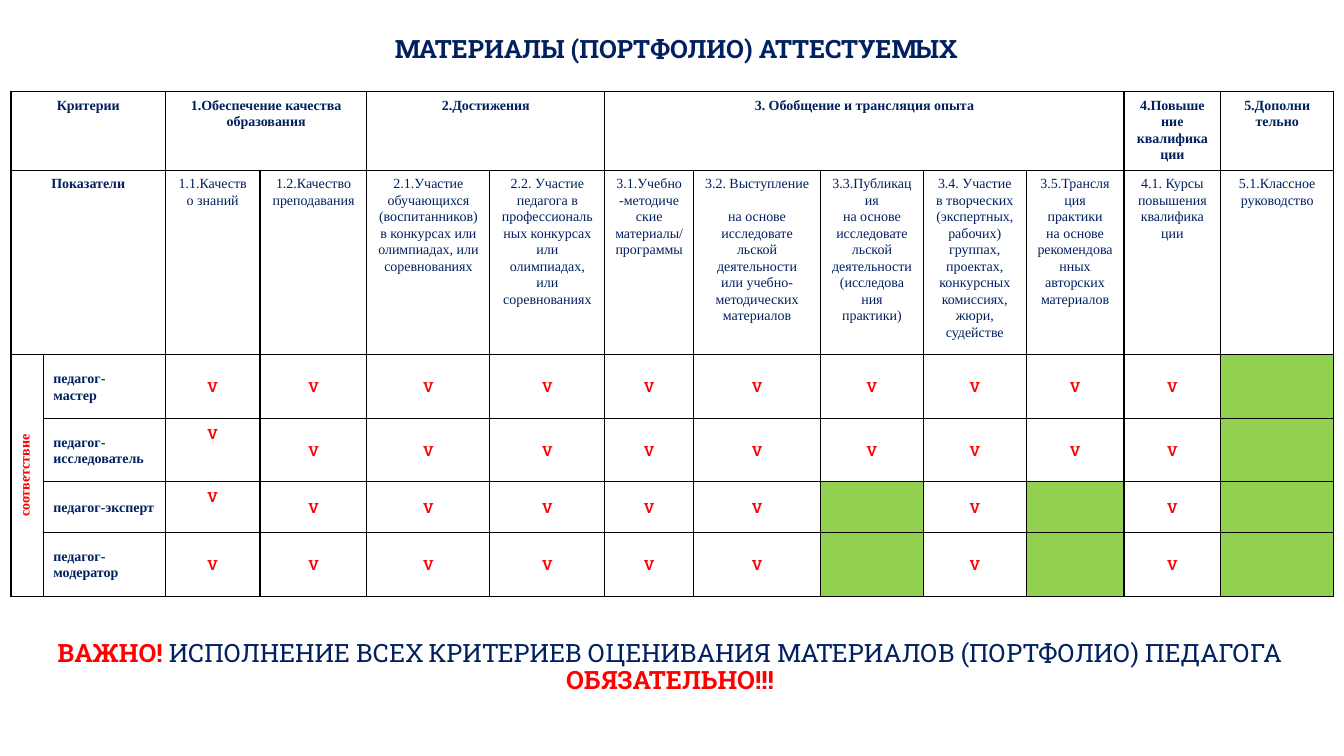
from dataclasses import dataclass

from lxml.etree import SubElement
from pptx import Presentation
from pptx.dml.color import RGBColor
from pptx.enum.text import MSO_ANCHOR, PP_ALIGN
from pptx.oxml.ns import qn
from pptx.util import Inches, Pt


@dataclass(frozen=True)
class Theme:
    """Colours, fonts and type sizes of the slide."""
    navy: RGBColor = RGBColor.from_string("002060")
    red: RGBColor = RGBColor.from_string("FF0000")
    green: RGBColor = RGBColor.from_string("92D050")
    white: RGBColor = RGBColor.from_string("FFFFFF")
    border: str = "000000"
    display: str = "Roboto Slab"
    body: str = "Times New Roman"
    heading_size: Pt = Pt(18)
    cell_size: Pt = Pt(10)
    border_width: Pt = Pt(1)


@dataclass(frozen=True)
class Box:
    """Rectangle counted in grid steps."""
    left: int
    top: int
    width: int
    height: int

    def place(self):
        """Return the rectangle as slide lengths."""
        return [steps * GRID for steps in (self.left, self.top, self.width, self.height)]


THEME = Theme()
GRID = Inches(0.01)
SLIDE_COLUMNS, SLIDE_ROWS = 1333, 750
COLUMN_STEPS = [32, 121, 94, 106, 122, 114, 88, 126, 102, 102, 97, 96, 112]
ROW_STEPS = [78, 183, 63, 63, 50, 64]
LABEL_COLUMNS = 2

CRITERIA = [
    ("Критерии", 2),
    ("1.Обеспечение качества образования", 2),
    ("2.Достижения", 2),
    ("3. Обобщение и трансляция опыта", 5),
    ("4.Повыше\nние квалификации", 1),
    ("5.Дополни\nтельно", 1),
]
INDICATORS = [
    "1.1.Качество знаний",
    "1.2.Качество преподавания",
    "2.1.Участие обучающихся (воспитанников)\nв конкурсах или олимпиадах, или соревнованиях",
    "2.2. Участие педагога в профессиональ\nных конкурсах или олимпиадах, или соревнованиях",
    "3.1.Учебно-методиче\nские материалы/ программы",
    "3.2. Выступление\nна основе исследовате\nльской деятельности\nили учебно-\nметодических материалов",
    "3.3.Публикация\nна основе исследовате\nльской деятельности (исследова\nния практики)",
    "3.4. Участие\nв творческих (экспертных, рабочих) группах, проектах, "
    "конкурсных комиссиях, жюри,\nсудействе",
    "3.5.Трансля\nция практики\nна основе рекомендованных авторских материалов",
    "4.1. Курсы повышения квалифика\nции",
    "5.1.Классное руководство",
]
SPACED_INDICATOR = INDICATORS.index(next(t for t in INDICATORS if t.startswith("3.2.")))
LEVELS = [
    ("педагог-\nмастер", "VVVVVVVVVV-", MSO_ANCHOR.MIDDLE),
    ("педагог-исследователь", "VVVVVVVVVV-", MSO_ANCHOR.TOP),
    ("педагог-эксперт", "VVVVVV-V-V-", MSO_ANCHOR.TOP),
    ("педагог-модератор", "VVVVVV-V-V-", MSO_ANCHOR.MIDDLE),
]


def style_font(font, color, bold, name, size):
    """Set the look of a font."""
    font.name, font.size, font.bold = name, size, bold
    font.color.rgb = color


def frame_cell(cell, fill):
    """Draw the four borders of a cell and fill it."""
    properties = cell._tc.get_or_add_tcPr()
    for side in ("a:lnL", "a:lnR", "a:lnT", "a:lnB"):
        line = SubElement(properties, qn(side), w=str(THEME.border_width))
        solid = SubElement(line, qn("a:solidFill"))
        SubElement(solid, qn("a:srgbClr"), val=THEME.border)
    cell.fill.solid()
    cell.fill.fore_color.rgb = fill


def write_cell(cell, text, color=THEME.navy, bold=True, name=THEME.body,
               align=PP_ALIGN.CENTER, anchor=MSO_ANCHOR.TOP):
    """Write the paragraphs of a cell."""
    cell.text_frame.text = text
    cell.vertical_anchor = anchor
    for paragraph in cell.text_frame.paragraphs:
        paragraph.alignment = align
        paragraph.line_spacing = 1.07
        style_font(paragraph.font, color, bold, name, THEME.cell_size)


def add_headers(table):
    """Fill the rows of criteria and indicators."""
    column = 0
    for criterion, span in CRITERIA:
        cell = table.cell(0, column)
        if span > 1:
            cell.merge(table.cell(0, column + span - 1))
        write_cell(cell, criterion)
        column += span
    table.cell(1, 0).merge(table.cell(1, LABEL_COLUMNS - 1))
    write_cell(table.cell(1, 0), "Показатели")
    for column, indicator in enumerate(INDICATORS, LABEL_COLUMNS):
        write_cell(table.cell(1, column), indicator, bold=False)
    speech = table.cell(1, LABEL_COLUMNS + SPACED_INDICATOR)
    speech.text_frame.paragraphs[0].space_after = Pt(11.7)


def add_levels(table):
    """Fill the rows of teacher levels with their marks."""
    compliance = table.cell(2, 0)
    compliance.merge(table.cell(1 + len(LEVELS), 0))
    write_cell(compliance, "соответствие", THEME.red, anchor=MSO_ANCHOR.MIDDLE)
    compliance._tc.get_or_add_tcPr().set("vert", "vert270")
    for row, (level, marks, first_anchor) in enumerate(LEVELS, 2):
        write_cell(table.cell(row, 1), level, align=PP_ALIGN.LEFT, anchor=MSO_ANCHOR.MIDDLE)
        for column, mark in enumerate(marks, LABEL_COLUMNS):
            cell = table.cell(row, column)
            if mark == "V":
                anchor = first_anchor if column == LABEL_COLUMNS else MSO_ANCHOR.MIDDLE
                write_cell(cell, mark, THEME.red, name=THEME.display, anchor=anchor)
            else:
                cell.fill.fore_color.rgb = THEME.green


def add_matrix(slide, box):
    """Place the table of criteria in its box."""
    table = slide.shapes.add_table(len(ROW_STEPS), len(COLUMN_STEPS), *box.place()).table
    table.first_row = table.horz_banding = False
    for column, steps in zip(table.columns, COLUMN_STEPS):
        column.width = box.width * GRID * steps // sum(COLUMN_STEPS)
    for row, steps in zip(table.rows, ROW_STEPS):
        row.height = box.height * GRID * steps // sum(ROW_STEPS)
    for cell in table.iter_cells():
        frame_cell(cell, THEME.white)
    add_headers(table)
    add_levels(table)


def write_heading(shape, box, runs):
    """Place a centred line of coloured runs in its box."""
    shape.left, shape.top, shape.width, shape.height = box.place()
    frame = shape.text_frame
    frame.word_wrap = True
    frame.vertical_anchor = MSO_ANCHOR.TOP
    paragraph = frame.paragraphs[0]
    paragraph.alignment = PP_ALIGN.CENTER
    paragraph.line_spacing = 0.9
    for text, color, bold in runs:
        run = paragraph.add_run()
        run.text = text
        style_font(run.font, color, bold, THEME.display, THEME.heading_size)


def add_portfolio_slide(deck):
    """Build the slide on portfolio materials."""
    slide = deck.slides.add_slide(deck.slide_layouts[5])
    add_matrix(slide, Box(11, 91, sum(COLUMN_STEPS), sum(ROW_STEPS)))
    write_heading(slide.shapes.title, Box(8, 31, 1325, 36),
                  [("МАТЕРИАЛЫ (ПОРТФОЛИО) АТТЕСТУЕМЫХ", THEME.navy, True)])
    notice_box = Box(2, 631, 1325, 73)
    notice = slide.shapes.add_textbox(*notice_box.place())
    write_heading(notice, notice_box, [
        ("ВАЖНО! ", THEME.red, True),
        ("ИСПОЛНЕНИЕ ВСЕХ КРИТЕРИЕВ ОЦЕНИВАНИЯ МАТЕРИАЛОВ (ПОРТФОЛИО) ПЕДАГОГА ",
         THEME.navy, False),
        ("ОБЯЗАТЕЛЬНО!!!", THEME.red, True),
    ])


def main():
    """Create the deck and save it."""
    deck = Presentation()
    deck.slide_width, deck.slide_height = SLIDE_COLUMNS * GRID, SLIDE_ROWS * GRID
    add_portfolio_slide(deck)
    deck.save("out.pptx")


if __name__ == "__main__":
    main()
